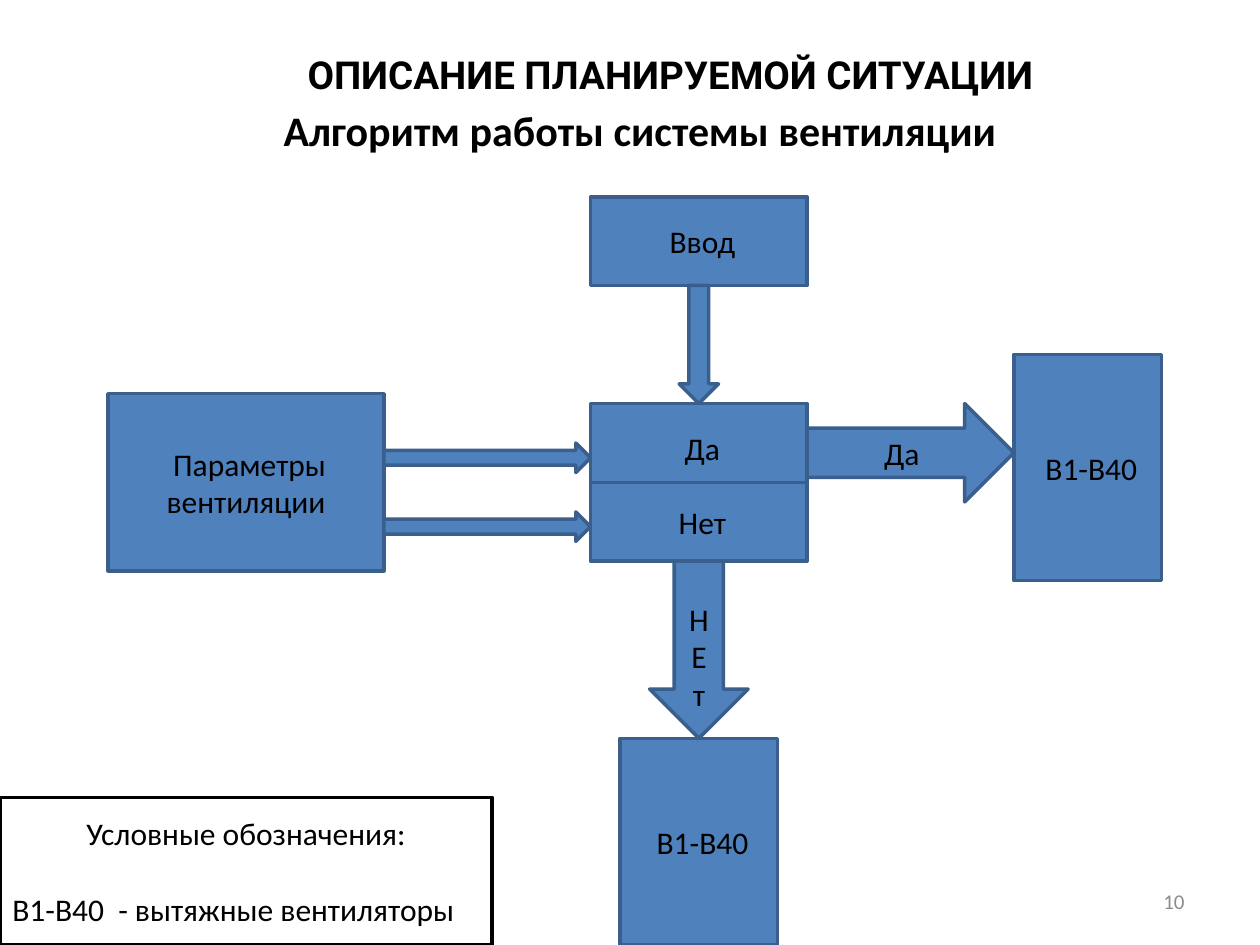
from lxml import etree
from pptx import Presentation
from pptx import util as u
from pptx.dml.color import RGBColor
from pptx.enum import shapes, text
from pptx.oxml.ns import qn

BLUE, EDGE, BLACK, GREY = "4F81BD", "3A5F8C", "000000", "8C8C8C"
RECT = shapes.MSO_SHAPE.RECTANGLE
RIGHT = shapes.MSO_SHAPE.RIGHT_ARROW
DOWN = shapes.MSO_SHAPE.DOWN_ARROW
COLUMNS = 64

TITLE = "ОПИСАНИЕ ПЛАНИРУЕМОЙ СИТУАЦИИ"
SUBTITLE = "Алгоритм работы системы вентиляции"
PAGE_NUMBER = "10"
LEGEND = ["Условные обозначения:", "В1-В40  - вытяжные вентиляторы"]
FLOW = [
    (RECT, " Параметры вентиляции", (5.5, 20, 14, 9)),
    (RECT, " Да", (30, 20.5, 11, 4.5)),
    (RECT, " Нет", (30, 24.5, 11, 4)),
    (RIGHT, "", (19.5, 26, 10.5, 1.5)),
    (RECT, " Ввод", (30, 10, 11, 4.5)),
    (DOWN, "", (34.5, 14.5, 2, 6)),
    (RECT, " В1-В40", (51.5, 18, 7.5, 11.5)),
    (RIGHT, " Да", (41, 20.5, 10.5, 5)),
    (DOWN, " НЕт", (33, 28.5, 5, 9)),
    (RECT, " В1-В40", (31.5, 37.5, 8, 10.5)),
    (RIGHT, "", (19.5, 22.5, 10.5, 1.5)),
]
LEGEND_CELLS = (0, 40.5, 25, 7.5)

presentation = Presentation()
presentation.slide_width, presentation.slide_height = u.Inches(10), u.Inches(7.5)
slide = presentation.slides.add_slide(presentation.slide_layouts[1])
cell = presentation.slide_width / COLUMNS


def color(value):
    return RGBColor.from_string(value)


def place(shape, left, top, width, height):
    shape.left, shape.top = u.Inches(left), u.Inches(top)
    shape.width, shape.height = u.Inches(width), u.Inches(height)


def write(paragraph, words, size=18, font="Calibri", fill=BLACK, bold=False,
          align=text.PP_ALIGN.CENTER, before=0):
    paragraph.text = words
    paragraph.alignment = align
    paragraph.space_before = u.Pt(before)
    for run in paragraph.runs:
        run.font.size, run.font.name, run.font.bold = u.Pt(size), font, bold
        run.font.color.rgb = color(fill)


def add_block(kind, cells, fill=BLUE, line=EDGE):
    shape = slide.shapes.add_shape(kind, *(round(count * cell) for count in cells))
    shape.shadow.inherit = False
    if fill:
        shape.fill.solid()
        shape.fill.fore_color.rgb = color(fill)
    else:
        shape.fill.background()
    shape.line.color.rgb = color(line)
    shape.line.width = u.Pt(2)
    shape.text_frame.word_wrap = True
    shape.text_frame.vertical_anchor = text.MSO_ANCHOR.MIDDLE
    return shape


title = slide.shapes.title
place(title, 1.8, 0.23, 6.5, 0.72)
title.text_frame.vertical_anchor = text.MSO_ANCHOR.MIDDLE
title.text_frame.auto_size = text.MSO_AUTO_SIZE.NONE
write(title.text_frame.paragraphs[0], TITLE, size=22, font="Roboto", bold=True,
      align=text.PP_ALIGN.RIGHT)

body = slide.placeholders[1]
place(body, 0.33, 0.78, 9.5, 6.59)
body.text_frame.auto_size = text.MSO_AUTO_SIZE.NONE
subtitle = body.text_frame.paragraphs[0]
properties = subtitle._p.get_or_add_pPr()
properties.set("marL", "0")
properties.set("indent", "0")
etree.SubElement(properties, qn("a:buNone"))
write(subtitle, SUBTITLE, size=24, bold=True)

number = slide.shapes.add_textbox(0, 0, 0, 0)
place(number, 7.17, 6.95, 2.33, 0.4)
number.text_frame.word_wrap = True
number.text_frame.vertical_anchor = text.MSO_ANCHOR.MIDDLE
write(number.text_frame.paragraphs[0], PAGE_NUMBER, size=12, fill=GREY,
      align=text.PP_ALIGN.RIGHT)

for kind, words, cells in FLOW:
    block = add_block(kind, cells)
    if words:
        write(block.text_frame.paragraphs[0], words)

legend = add_block(RECT, LEGEND_CELLS, fill=None, line=BLACK).text_frame
write(legend.paragraphs[0], LEGEND[0])
write(legend.add_paragraph(), LEGEND[1], align=text.PP_ALIGN.LEFT, before=22)

presentation.save("out.pptx")
